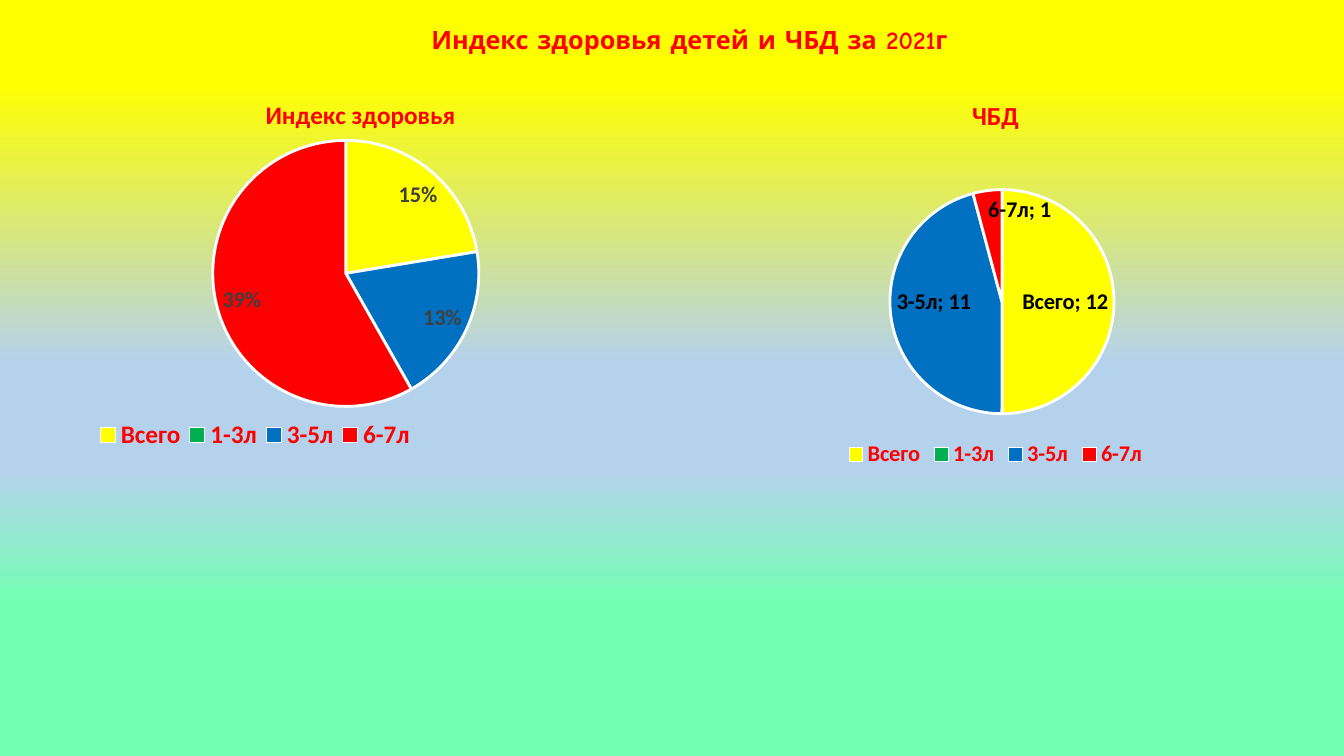
import pptx
import pptx.util
import pptx.dml.color
import pptx.chart.data
import pptx.enum.chart
import pptx.oxml
import pptx.oxml.ns

COLORS = {"yellow": "FFFF00", "green": "00B050", "blue": "0070C0", "red": "FF0000",
          "sky": "B5D2EC", "mint": "71FFB1", "white": "FFFFFF",
          "grey": "404040", "black": "000000"}
CATEGORIES = ["Всего", "1-3л", "3-5л", "6-7л"]
SLICE_COLORS = ["yellow", "green", "blue", "red"]
BACKGROUND_STOPS = [(11, "yellow"), (48, "sky"), (62, "sky"), (80, "mint")]
LABEL = pptx.enum.chart.XL_LABEL_POSITION


def style_font(font, size, color, bold=True, name="Calibri"):
    values = {"size": pptx.util.Pt(size), "bold": bold, "name": name}
    for key, value in values.items():
        setattr(font, key, value)
    font.color.rgb = pptx.dml.color.RGBColor.from_string(COLORS[color])


def set_layout(element, target, **shares):
    """Place a chart part by shares of the chart's size."""
    for old in element.findall(pptx.oxml.ns.qn("c:layout")):
        element.remove(old)
    modes = '<c:xMode val="edge"/><c:yMode val="edge"/>'
    sizes = "".join(f'<c:{key} val="{value}"/>' for key, value in shares.items())
    layout = pptx.oxml.parse_xml(
        f'<c:layout {pptx.oxml.ns.nsdecls("c")}><c:manualLayout>{target}{modes}{sizes}'
        '</c:manualLayout></c:layout>')
    after = element.find(pptx.oxml.ns.qn("c:legendPos"))
    element.insert(0 if after is None else element.index(after) + 1, layout)


deck = pptx.Presentation()
deck.slide_width = pptx.util.Inches(13.33)
deck.slide_height = pptx.util.Inches(7.5)
page = deck.slides.add_slide(deck.slide_layouts[6])

# Background gradient, top to bottom
page.background.fill.gradient()
gradient = page.background._cSld.find(".//" + pptx.oxml.ns.qn("a:gradFill"))
for child in list(gradient):
    gradient.remove(child)
stops = "".join(f'<a:gs pos="{share * 1000}"><a:srgbClr val="{COLORS[color]}"/></a:gs>'
                for share, color in BACKGROUND_STOPS)
for part in (f'<a:gsLst {pptx.oxml.ns.nsdecls("a")}>{stops}</a:gsLst>',
             f'<a:lin {pptx.oxml.ns.nsdecls("a")} ang="5400000" scaled="0"/>'):
    gradient.append(pptx.oxml.parse_xml(part))

# Heading
box = page.shapes.add_textbox(*map(pptx.util.Inches, (3.56, 0.19, 6.67, 0.4)))
box.text_frame.word_wrap = True
box.text_frame.margin_left = pptx.util.Inches(0.72)
span = box.text_frame.paragraphs[0].add_run()
span.text = "Индекс здоровья детей и ЧБД за 2021г"
style_font(span.font, 18, "red", name="Comic Neue")

# Two pie charts
pies = [
    {"title": "Индекс здоровья", "series": "Series 1", "values": [0.15, 0, 0.13, 0.39],
     "place": (0.67, 0.79, 5.81, 3.77), "title_size": 18, "legend_size": 18,
     "label_color": "grey", "format": "0%", "names": False, "position": LABEL.BEST_FIT,
     "plot": {"x": 0.01, "y": 0.16, "w": 0.93, "h": 0.7}},
    {"title": "ЧБД", "series": "ЧБД", "values": [12, 0, 11, 1],
     "place": (6.72, 0.79, 6.31, 3.9), "title_size": 18.6, "legend_size": 16,
     "label_color": "black", "format": "General", "names": True,
     "position": LABEL.INSIDE_END,
     "plot": {"x": 0.33, "y": 0.28, "w": 0.36, "h": 0.57}},
]
charts = []
for pie in pies:
    data = pptx.chart.data.CategoryChartData(number_format=pie["format"])
    data.categories = CATEGORIES
    data.add_series(pie["series"], pie["values"])
    chart = page.shapes.add_chart(pptx.enum.chart.XL_CHART_TYPE.PIE,
                                  *map(pptx.util.Inches, pie["place"]), data).chart
    charts.append(chart)
    style_font(chart.font, 10, "black", bold=False)
    set_layout(chart._chartSpace.chart.plotArea, '<c:layoutTarget val="inner"/>',
               **pie["plot"])

    # Title and legend
    chart.has_title = True
    title = chart.chart_title.text_frame.paragraphs[0].add_run()
    title.text = pie["title"]
    style_font(title.font, pie["title_size"], "red")
    chart.has_legend = True
    chart.legend.position = pptx.enum.chart.XL_LEGEND_POSITION.BOTTOM
    chart.legend.include_in_layout = False
    style_font(chart.legend.font, pie["legend_size"], "red")

    # Slices
    plot = chart.plots[0]
    plot.vary_by_categories = True
    for index, color in enumerate(SLICE_COLORS):
        slice_format = plot.series[0].points[index].format
        slice_format.fill.solid()
        slice_format.fill.fore_color.rgb = pptx.dml.color.RGBColor.from_string(COLORS[color])
        slice_format.line.color.rgb = pptx.dml.color.RGBColor.from_string(COLORS["white"])
        slice_format.line.width = pptx.util.Pt(2)

    # Data labels, none on the empty slice
    labels = plot.series[0].data_labels
    settings = {"show_value": True, "show_category_name": pie["names"],
                "show_percentage": False, "number_format": pie["format"],
                "number_format_is_linked": False, "position": pie["position"]}
    for key, value in settings.items():
        setattr(labels, key, value)
    style_font(labels.font, 16, pie["label_color"])
    labels._element.insert(0, pptx.oxml.parse_xml(
        f'<c:dLbl {pptx.oxml.ns.nsdecls("c")}><c:idx val="{pie["values"].index(0)}"/>'
        '<c:delete val="1"/></c:dLbl>'))

# Fixed legend place in the health index chart
set_layout(charts[0].legend._element, "", x=0.04, y=0.9, w=0.56, h=0.09)

deck.save("out.pptx")
